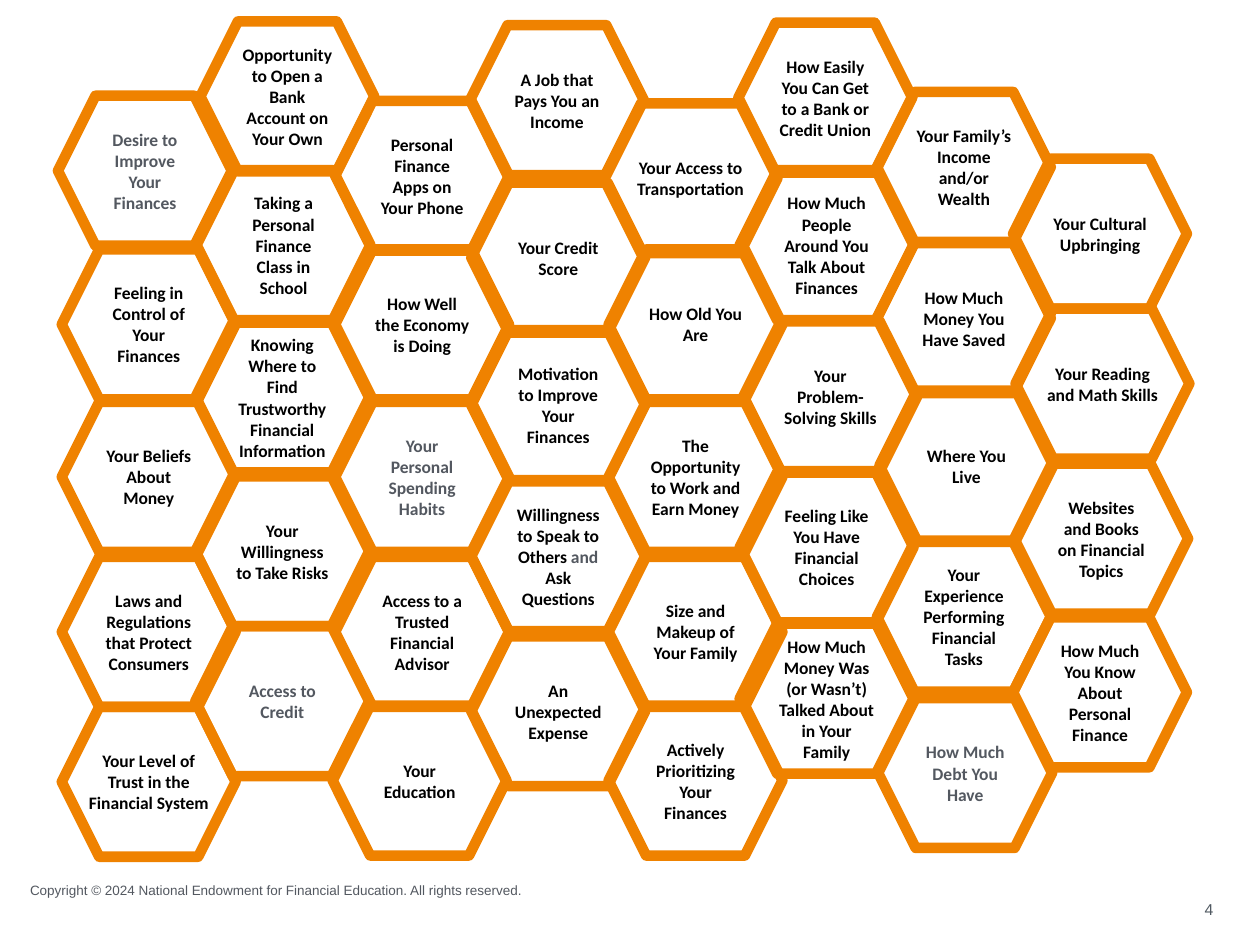
from pptx import Presentation
from pptx.dml.color import RGBColor
from pptx.enum.shapes import MSO_SHAPE
from pptx.enum.text import MSO_ANCHOR, PP_ALIGN
from pptx.util import Inches, Pt

HEXAGON = MSO_SHAPE.HEXAGON
MIDDLE, BOTTOM = MSO_ANCHOR.MIDDLE, MSO_ANCHOR.BOTTOM
LEFT, CENTER = PP_ALIGN.LEFT, PP_ALIGN.CENTER

# Each column: left edge, then cells of (top, text, optional shift from that edge).
# Text between asterisks is muted; a line break starts a new paragraph.
COLUMNS = [
    (0.49, [
        (0.76, "*Desire to Improve Your Finances*", -0.03),
        (1.98, "Feeling in Control of Your Finances"),
        (3.19, "Your Beliefs About Money"),
        (4.42, "Laws and Regulations that Protect Consumers"),
        (5.61, "Your Level of Trust in the Financial System"),
    ]),
    (1.55, [
        (0.17, "Opportunity to Open a Bank Account on Your Own", 0.04),
        (1.35, "Taking a Personal Finance Class in School", 0.01),
        (2.56, "Knowing Where to Find Trustworthy Financial Information"),
        (3.78, "Your Willingness to Take Risks"),
        (4.97, "*Access to Credit*"),
    ]),
    (2.66, [
        (0.8, "Personal Finance Apps on Your Phone"),
        (1.98, "How Well the Economy is Doing"),
        (3.19, "*Your Personal Spending Habits*"),
        (4.42, "Access to a Trusted Financial Advisor"),
        (5.6, "Your Education", -0.02),
    ]),
    (3.74, [
        (0.2, "A Job that Pays You an Income", -0.01),
        (1.45, "Your Credit Score"),
        (2.62, "Motivation to Improve Your Finances"),
        (3.82, "Willingness to Speak to Others *and *Ask Questions"),
        (5.05, "An Unexpected Expense"),
    ]),
    (4.83, [
        (0.82, "Your Access to Transportation", -0.04),
        (1.98, "How Old You Are"),
        (3.19, "The Opportunity to Work and Earn Money"),
        (4.42, "Size and Makeup of Your Family"),
        (5.6, "Actively Prioritizing Your Finances"),
    ]),
    (5.87, [
        (0.18, "How Easily You Can Get to a Bank or Credit Union", -0.01),
        (1.35, "How Much People Around You Talk About Finances"),
        (2.55, "Your Problem-\nSolving Skills", 0.03),
        (3.75, "Feeling Like You Have Financial Choices"),
        (4.95, "How Much Money Was (or Wasn’t) Talked About in Your Family"),
    ]),
    (6.96, [
        (0.73, "Your Family’s Income and/or Wealth"),
        (1.93, "How Much Money You Have Saved"),
        (3.1, "Where You Live", 0.02),
        (4.3, "Your Experience Performing Financial Tasks"),
        (5.54, "*How Much Debt You Have*", 0.01),
    ]),
    (8.04, [
        (1.26, "Your Cultural Upbringing"),
        (2.45, "Your Reading and Math Skills", 0.02),
        (3.68, "Websites and Books on Financial Topics", 0.01),
        (4.9, "How Much You Know About Personal Finance"),
    ]),
]
WIDE_TEXT = {
    "Your Level of Trust in the Financial System",
    "Your Access to Transportation",
    "Your Reading and Math Skills",
}
COPYRIGHT = "Copyright © 2024 National Endowment for Financial Education. All rights reserved."
PAGE_NUMBER = "4"

CELL_WIDTH, CELL_HEIGHT = 1.38, 1.19
THEME = {
    "outline": RGBColor(0xEF, 0x82, 0x00),
    "outline_width": Pt(6),
    "text": RGBColor(0, 0, 0),
    "muted": RGBColor(0x53, 0x58, 0x60),
    "number": RGBColor(0x50, 0x59, 0x61),
    "cell_font": {"name": "Calibri", "size": Pt(10), "bold": True},
    "copyright_font": {"name": "Arial", "size": Pt(7.7)},
    "number_font": {"name": "Arial", "size": Pt(9)},
}


def apply_format(target, values):
    for name, value in values.items():
        setattr(target, name, value)


def add_span(para, text, font, color):
    span = para.add_run()
    span.text = text
    apply_format(span.font, font)
    span.font.color.rgb = color


def add_cell(page, left, top, text):
    box = page.shapes.add_shape(HEXAGON, Inches(left), Inches(top),
                                Inches(CELL_WIDTH), Inches(CELL_HEIGHT))
    box.adjustments[0] = 0.25
    box.shadow.inherit = False
    box.fill.background()
    box.line.color.rgb = THEME["outline"]
    box.line.width = THEME["outline_width"]
    frame = box.text_frame
    side = Inches(0 if text in WIDE_TEXT else 0.1)
    apply_format(frame, {
        "word_wrap": True, "vertical_anchor": MIDDLE,
        "margin_left": side, "margin_right": side,
        "margin_top": Inches(0.1), "margin_bottom": Inches(0.1),
    })
    for index, line in enumerate(text.split("\n")):
        para = frame.add_paragraph() if index else frame.paragraphs[0]
        para.alignment = CENTER
        for part, words in enumerate(line.split("*")):
            if words:
                color = THEME["muted" if part % 2 else "text"]
                add_span(para, words, THEME["cell_font"], color)


def add_label(page, place, text, font, color, anchor, para_format):
    box = page.shapes.add_textbox(*map(Inches, place))
    apply_format(box.text_frame, {"word_wrap": True, "vertical_anchor": anchor})
    para = box.text_frame.paragraphs[0]
    apply_format(para, para_format)
    add_span(para, text, font, color)


def main():
    deck = Presentation()
    deck.slide_width, deck.slide_height = Inches(10), Inches(7.5)
    page = deck.slides.add_slide(deck.slide_layouts[6])
    add_label(page, (0.14, 6.88, 4.46, 0.3), COPYRIGHT, THEME["copyright_font"],
              THEME["muted"], BOTTOM, {"alignment": LEFT, "line_spacing": 0.9})
    add_label(page, (9.35, 7.07, 0.49, 0.3), PAGE_NUMBER, THEME["number_font"],
              THEME["number"], MIDDLE, {"alignment": CENTER})
    for column_left, cells in COLUMNS:
        for top, text, *shift in cells:
            add_cell(page, column_left + sum(shift), top, text)
    deck.save("out.pptx")


if __name__ == "__main__":
    main()
